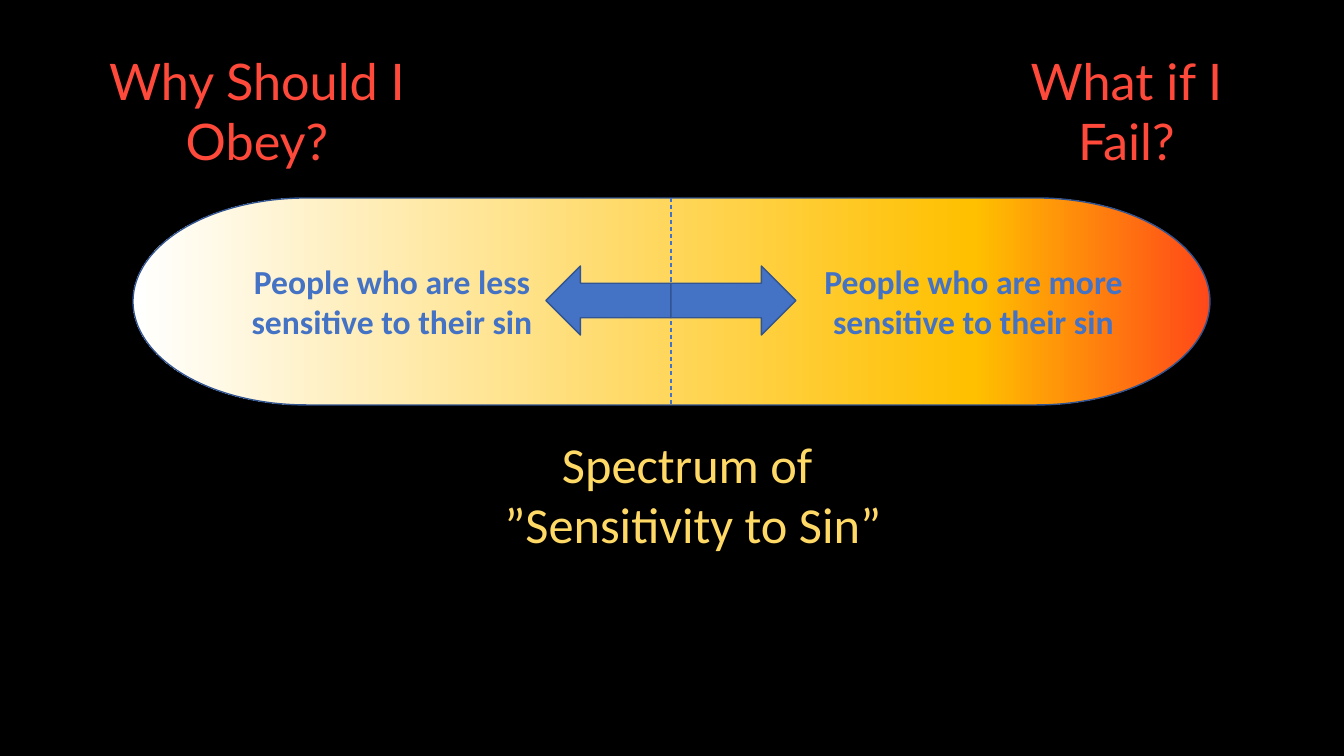
from copy import deepcopy

from lxml import etree
from pptx import Presentation
from pptx.dml.color import RGBColor
from pptx.enum.dml import MSO_LINE
from pptx.enum.shapes import MSO_CONNECTOR, MSO_SHAPE
from pptx.enum.text import MSO_AUTO_SIZE, PP_ALIGN
from pptx.oxml.ns import qn
from pptx.util import Pt

PX = 914400 / 100.8
SLIDE = (1344, 756)
COLORS = {
    "background": "000000",
    "heading": "FF4A3B",
    "caption": "FFD966",
    "blue": "4472C4",
    "outline": "325491",
}
SPECTRUM = (133, 198, 1077, 207)
SPECTRUM_STOPS = [(0, "FF4819"), (0.22, "FFC000"), (1, "FFFFFF")]
ARROW_SIZE = (125, 69)
ARROW_TOP = 266

# Paragraphs, box, size in points, font, colour, bold
TEXTS = [
    (["Spectrum of ", "”Sensitivity to Sin”"], (466, 428, 454, 132), 36, "Calibri", "caption", False),
    (["People who are less sensitive to their sin"], (233, 256, 318, 92), 24, "Calibri", "blue", True),
    (["People who are more sensitive to their sin"], (805, 256, 337, 92), 24, "Calibri", "blue", True),
    (["Why Should I Obey?"], (30, 45, 454, 132), 36, "Lato", "heading", False),
    (["What if I Fail?"], (969, 45, 315, 132), 36, "Lato", "heading", False),
]


def px(*lengths):
    return [round(n * PX) for n in lengths]


def rgb(name):
    return RGBColor.from_string(COLORS[name])


def add_outlined(slide, kind, box):
    sp = slide.shapes.add_shape(kind, *px(*box))
    sp.shadow.inherit = False
    sp.line.color.rgb = rgb("outline")
    sp.line.width = Pt(1)
    return sp


def add_spectrum(slide):
    sp = add_outlined(slide, MSO_SHAPE.FLOWCHART_TERMINATOR, SPECTRUM)
    sp.fill.gradient()
    sp.fill.gradient_angle = 180
    stop_list = sp.element.spPr.find(".//" + qn("a:gsLst"))
    stop_list.append(deepcopy(stop_list[-1]))
    for stop, (position, color) in zip(sp.fill.gradient_stops, SPECTRUM_STOPS):
        stop.position = position
        stop.color.rgb = RGBColor.from_string(color)


def add_arrow(slide, left, flipped):
    sp = add_outlined(slide, MSO_SHAPE.LEFT_ARROW, (left, ARROW_TOP, *ARROW_SIZE))
    sp.fill.solid()
    sp.fill.fore_color.rgb = rgb("blue")
    if flipped:
        sp.element.spPr.find(qn("a:xfrm")).set("flipH", "1")


def add_divider(slide, x):
    top, height = SPECTRUM[1], SPECTRUM[3]
    divider = slide.shapes.add_connector(MSO_CONNECTOR.STRAIGHT, *px(x, top, x, top + height))
    divider.line.color.rgb = rgb("blue")
    divider.line.width = Pt(0.75)
    divider.line.dash_style = MSO_LINE.DASH
    etree.SubElement(divider._element.spPr, qn("a:effectLst"))


def add_text(slide, paragraphs, box, size, font, color, bold):
    tf = slide.shapes.add_textbox(*px(*box)).text_frame
    tf.word_wrap = True
    tf.auto_size = MSO_AUTO_SIZE.SHAPE_TO_FIT_TEXT
    tf.text = "\n".join(paragraphs)
    for p in tf.paragraphs:
        p.alignment = PP_ALIGN.CENTER
        p.font.name = font
        p.font.size = Pt(size)
        p.font.bold = bold
        p.font.color.rgb = rgb(color)


def main():
    prs = Presentation()
    prs.slide_width, prs.slide_height = px(*SLIDE)
    slide = prs.slides.add_slide(prs.slide_layouts[6])
    slide.background.fill.solid()
    slide.background.fill.fore_color.rgb = rgb("background")

    middle = SPECTRUM[0] + SPECTRUM[2] // 2
    add_spectrum(slide)
    add_arrow(slide, middle - ARROW_SIZE[0], flipped=False)
    add_divider(slide, middle)
    add_arrow(slide, middle, flipped=True)
    for text in TEXTS:
        add_text(slide, *text)
    prs.save("out.pptx")


if __name__ == "__main__":
    main()
